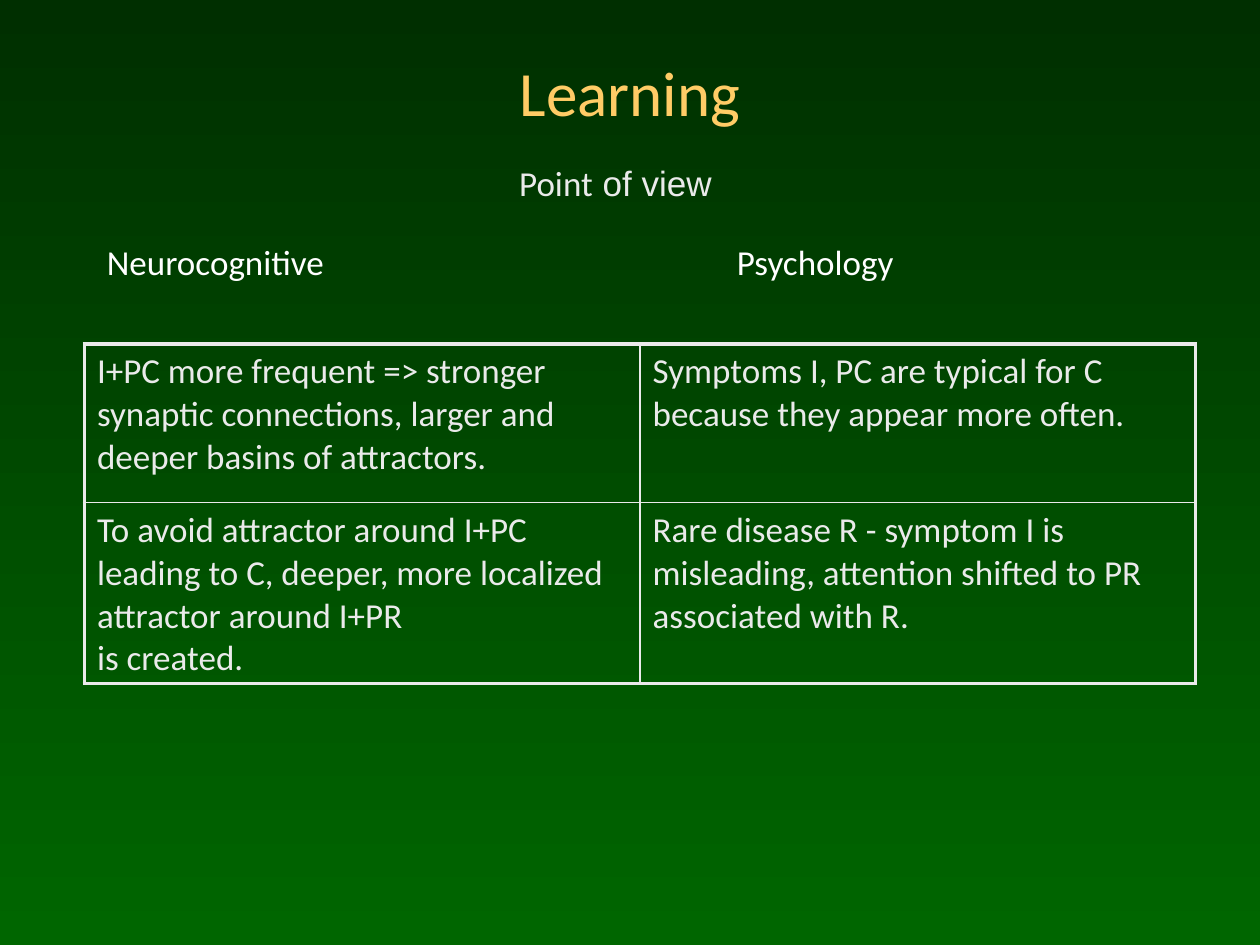
from lxml import etree
from pptx import Presentation
from pptx.dml.color import RGBColor
from pptx.enum import text
from pptx.oxml import ns
from pptx.util import Pt

GREEN_DARK = RGBColor(0x00, 0x2F, 0x00)
GREEN = RGBColor(0x00, 0x66, 0x00)
GOLD = RGBColor(0xFF, 0xCC, 0x66)
WHITE = RGBColor(0xFF, 0xFF, 0xFF)
PALE = RGBColor(0xEA, 0xEA, 0xEA)

OUTER_LINE, INNER_LINE = 2.25, 1
COMPARISON = [
    ["I+PC more frequent => stronger synaptic connections, larger and "
     "deeper basins of attractors.",
     "Symptoms I, PC are typical for C because they appear more often."],
    ["To avoid attractor around I+PC leading to C, deeper, more localized "
     "attractor around I+PR\vis created.",
     "Rare disease R - symptom I is misleading, attention shifted to PR "
     "associated with R."],
]


def element(parent, tag, **attributes):
    return etree.SubElement(parent, ns.qn(tag), attributes)


def style(run, color, size=20, font="Calibri"):
    run.font.size = Pt(size)
    run.font.name = font
    run.font.color.rgb = color


def add_text(slide, box, words, align=text.PP_ALIGN.LEFT):
    frame = slide.shapes.add_textbox(*map(Pt, box)).text_frame
    frame.word_wrap = True
    frame.text = words
    frame.paragraphs[0].alignment = align
    return frame


def paint_background(slide):
    fill = slide.background.fill
    fill.gradient()
    fill.gradient_angle = 270
    for stop, color in zip(fill.gradient_stops, (GREEN_DARK, GREEN)):
        stop.color.rgb = color


def add_title(slide, box):
    frame = add_text(slide, box, "Learning", text.PP_ALIGN.CENTER)
    frame.vertical_anchor = text.MSO_ANCHOR.MIDDLE
    run = frame.paragraphs[0].runs[0]
    style(run, GOLD, 36)
    effects = etree.Element(ns.qn("a:effectLst"))
    shadow = element(effects, "a:outerShdw", dist=str(Pt(2.8)), dir="2700000")
    element(shadow, "a:srgbClr", val="000000")
    run.font.fill  # the shadow follows the solid fill in the run properties
    run.font._element.find(ns.qn("a:solidFill")).addnext(effects)


def add_subtitle(slide, box):
    frame = add_text(slide, box, "Point", text.PP_ALIGN.CENTER)
    frame.auto_size = text.MSO_AUTO_SIZE.SHAPE_TO_FIT_TEXT
    line = frame.paragraphs[0]
    style(line.runs[0], PALE)
    rest = line.add_run()
    rest.text = " of view"
    style(rest, PALE, font="Arial")


def add_column_heads(slide, box, second_head):
    """Put both heads on one line, the second at a tab stop."""
    line = add_text(slide, box, "Neurocognitive\tPsychology").paragraphs[0]
    line.space_after = Pt(12)
    tabs = element(line._p.get_or_add_pPr(), "a:tabLst")
    element(tabs, "a:tab", pos=str(Pt(second_head)), algn="l")
    for run in line.runs:
        style(run, WHITE)


def set_borders(cell, widths):
    """Draw the sides given as {"L": points, ...} in the order L, R, T, B."""
    properties = cell._tc.get_or_add_tcPr()
    for index, (side, width) in enumerate(widths.items()):
        line = etree.Element(ns.qn(f"a:ln{side}"), w=str(Pt(width)))
        fill = element(line, "a:solidFill")
        element(fill, "a:srgbClr", val=str(PALE))
        properties.insert(index, line)


def add_comparison(slide, box, row_heights):
    rows, columns = len(COMPARISON), len(COMPARISON[0])
    table = slide.shapes.add_table(rows, columns, *map(Pt, box)).table
    table.first_row = table.horz_banding = False
    for row, height in zip(table.rows, row_heights):
        row.height = Pt(height)
    for r, statements in enumerate(COMPARISON):
        for c, statement in enumerate(statements):
            cell = table.cell(r, c)
            cell.text = statement
            cell.fill.background()
            for run in cell.text_frame.paragraphs[0].runs:
                style(run, PALE)
            at_edge = {"L": c == 0, "R": c == columns - 1,
                       "T": r == 0, "B": r == rows - 1}
            set_borders(cell, {side: OUTER_LINE if edge else INNER_LINE
                               for side, edge in at_edge.items()})


def main():
    deck = Presentation()
    deck.slide_width, deck.slide_height = Pt(720), Pt(540)
    slide = deck.slides.add_slide(deck.slide_layouts[6])
    paint_background(slide)
    add_title(slide, (54, 27.36, 612, 49.68))
    add_column_heads(slide, (54, 133.92, 639.36, 36.72), second_head=360)
    add_comparison(slide, (48.24, 196.56, 635.04, 193.68), (90.72, 102.96))
    add_subtitle(slide, (241.2, 88.56, 221.04, 30.96))
    deck.save("out.pptx")


if __name__ == "__main__":
    main()
